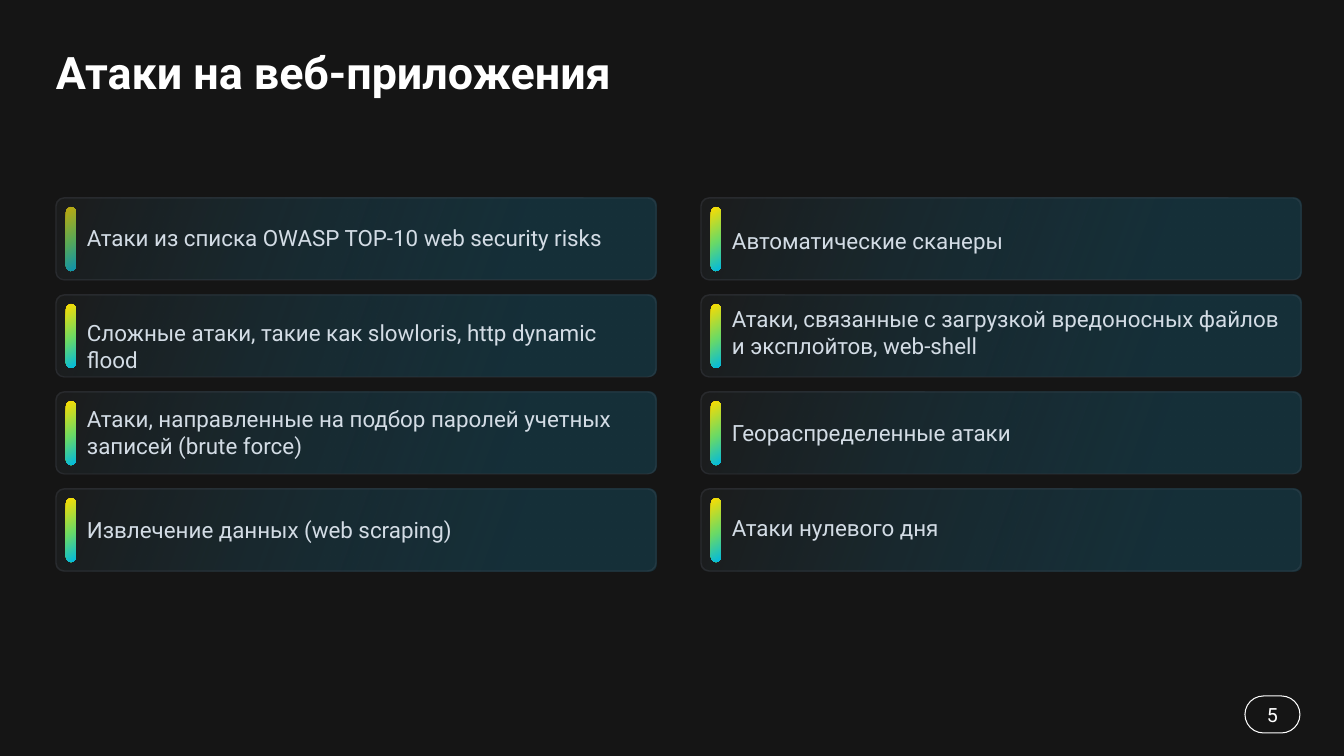
from lxml.etree import SubElement
from pptx import Presentation
from pptx.dml.color import RGBColor
from pptx.enum.shapes import MSO_SHAPE
from pptx.enum.text import MSO_ANCHOR, PP_ALIGN
from pptx.oxml.ns import qn
from pptx.util import Pt

EMU_PER_PX = 914400 / 100.8

BACKGROUND = RGBColor(0x15, 0x15, 0x15)
WHITE = RGBColor(0xFF, 0xFF, 0xFF)
BODY_TEXT = RGBColor(0xD3, 0xDC, 0xE5)
CARD_DARK = RGBColor(0x2C, 0x2C, 0x2C)
CARD_BLUE = RGBColor(0x1C, 0xA4, 0xD6)
CARD_BORDER = RGBColor(0x5B, 0x5F, 0x6D)
BAR_YELLOW = RGBColor(0xFF, 0xDC, 0x00)
BAR_GREEN = RGBColor(0x6C, 0xDA, 0x66)
BAR_CYAN = RGBColor(0x00, 0xB9, 0xE2)

# Gradient stops: position %, colour, opacity %
CARD_STOPS = [(0, CARD_DARK, 30), (76, CARD_BLUE, 18)]
BAR_STOPS = [(0, BAR_YELLOW, 100), (54, BAR_GREEN, 100), (100, BAR_CYAN, 100)]

# Card grid
CARD_LEFT, CARD_TOP = 56, 198
CARD_WIDTH, CARD_HEIGHT = 600, 82
COLUMN_STEP, ROW_STEP = 645, 97

# Columns of attacks: text and the top of its text box
ATTACKS = [
    [
        ("Атаки из списка OWASP TOP-10 web security risks", 219),
        ("Сложные атаки, такие как slowloris, http dynamic flood", 314),
        ("Атаки, направленные на подбор паролей учетных записей (brute force)", 400),
        ("Извлечение данных (web scraping)", 511),
    ],
    [
        ("Автоматические сканеры", 222),
        ("Атаки, связанные с загрузкой вредоносных файлов и эксплойтов, web-shell", 300),
        ("Геораспределенные атаки", 414),
        ("Атаки нулевого дня", 509),
    ],
]


def px(length):
    return round(length * EMU_PER_PX)


def set_opacity(color_element, percent):
    SubElement(color_element, qn("a:alpha")).set("val", str(percent * 1000))


class SlideBuilder:
    font = "Roboto"

    def __init__(self, presentation):
        self.slide = presentation.slides.add_slide(presentation.slide_layouts[6])
        self.slide.background.fill.solid()
        self.slide.background.fill.fore_color.rgb = BACKGROUND

    def pill(self, left, top, width, height, roundness=0.5):
        shape = self.slide.shapes.add_shape(
            MSO_SHAPE.ROUNDED_RECTANGLE, px(left), px(top), px(width), px(height))
        shape.adjustments[0] = roundness
        shape.shadow.inherit = False
        shape.fill.background()
        shape.line.fill.background()
        return shape

    def outline(self, shape, color, width, opacity=100):
        shape.line.color.rgb = color
        shape.line.width = Pt(width)
        if opacity < 100:
            line_color = shape.element.spPr.find(qn("a:ln")).find(".//" + qn("a:srgbClr"))
            set_opacity(line_color, opacity)

    def gradient(self, shape, stops, clockwise_angle):
        shape.fill.gradient()
        shape.fill.gradient_angle = 360 - clockwise_angle
        stop_list = shape.element.spPr.find(qn("a:gradFill")).find(qn("a:gsLst"))
        for default_stop in list(stop_list):
            stop_list.remove(default_stop)
        for position, color, opacity in stops:
            stop = SubElement(stop_list, qn("a:gs"))
            stop.set("pos", str(position * 1000))
            color_element = SubElement(stop, qn("a:srgbClr"))
            color_element.set("val", str(color))
            if opacity < 100:
                set_opacity(color_element, opacity)

    def card(self, left, top):
        shape = self.pill(left, top, CARD_WIDTH, CARD_HEIGHT, 0.1)
        self.gradient(shape, CARD_STOPS, 20)
        self.outline(shape, CARD_BORDER, 1, 22)

    def bar(self, left, top):
        self.gradient(self.pill(left, top, 10, 64), BAR_STOPS, 60)

    def text(self, content, left, top, width, height, size, color, insets=(10, 5),
             bold=False, anchor=MSO_ANCHOR.TOP, align=PP_ALIGN.LEFT):
        box = self.slide.shapes.add_textbox(px(left), px(top), px(width), px(height))
        frame = box.text_frame
        frame.word_wrap = True
        frame.vertical_anchor = anchor
        frame.margin_left = frame.margin_right = px(insets[0])
        frame.margin_top = frame.margin_bottom = px(insets[1])
        paragraph = frame.paragraphs[0]
        paragraph.alignment = align
        run = paragraph.add_run()
        run.text = content
        run.font.name = self.font
        run.font.size = Pt(size)
        run.font.bold = bold
        run.font.color.rgb = color


def main():
    presentation = Presentation()
    presentation.slide_width = px(1344)
    presentation.slide_height = px(756)
    builder = SlideBuilder(presentation)

    # Page number
    builder.outline(builder.pill(1245, 696, 55, 37), WHITE, 0.75)
    builder.text("5", 1245, 701, 55, 27, 14, WHITE, insets=(0, 0),
                 anchor=MSO_ANCHOR.MIDDLE, align=PP_ALIGN.CENTER)

    # Title
    builder.text("Атаки на веб-приложения", 56, 38, 1244, 67, 32, WHITE,
                 insets=(0, 10), bold=True, anchor=MSO_ANCHOR.MIDDLE)

    # Attack cards
    for column, attacks in enumerate(ATTACKS):
        left = CARD_LEFT + column * COLUMN_STEP
        for row, (attack, text_top) in enumerate(attacks):
            top = CARD_TOP + row * ROW_STEP
            # The first card lies over its bar and dims it
            if (column, row) == (0, 0):
                builder.bar(left + 10, top + 9)
                builder.card(left, top)
            else:
                builder.card(left, top)
                builder.bar(left + 10, top + 9)
            builder.text(attack, left + 21, text_top, 570, 37, 16, BODY_TEXT)

    presentation.save("out.pptx")


if __name__ == "__main__":
    main()
